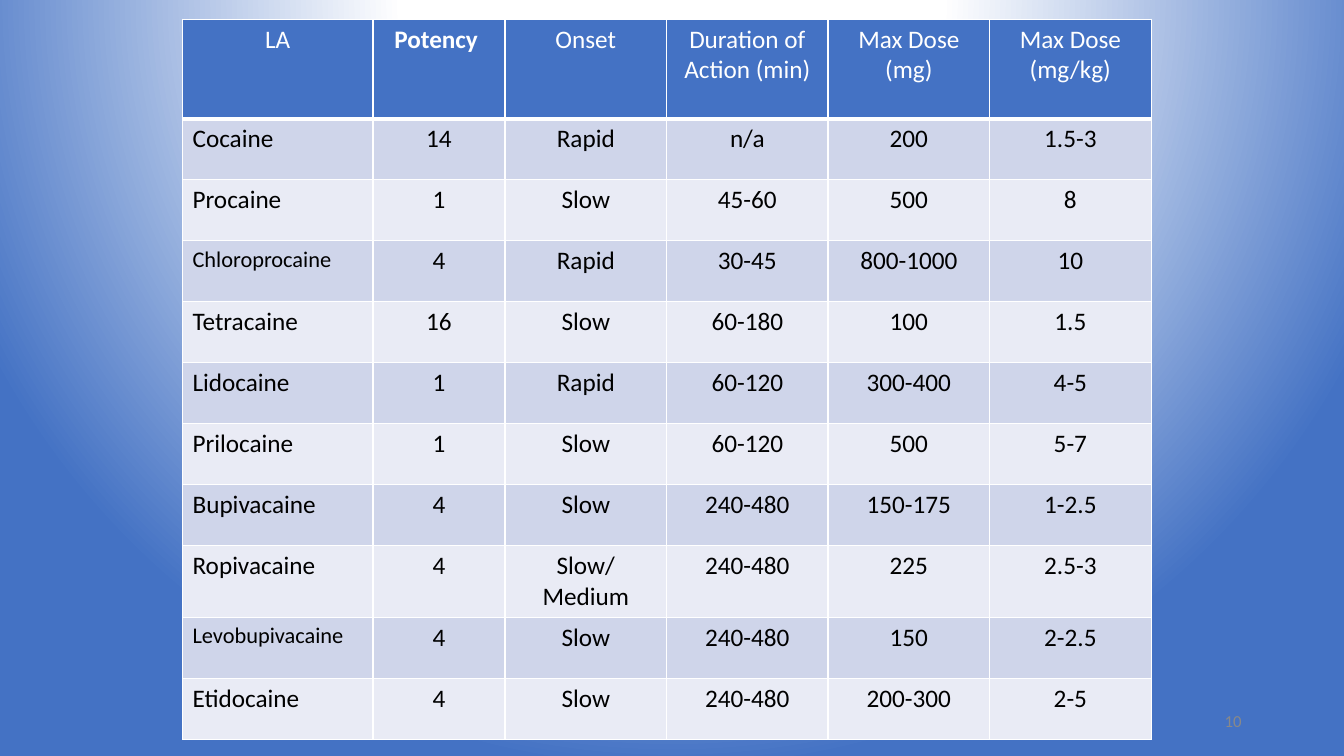
import pptx
import pptx.util
import pptx.dml.color
import pptx.enum.text
import pptx.oxml
import pptx.oxml.ns

ALIGN = pptx.enum.text.PP_ALIGN
ANCHOR = pptx.enum.text.MSO_ANCHOR
WHITE, BLACK, BLUE, GREY = "FFFFFF", "000000", "4472C4", "898989"
BANDS = ["CFD5EA", "E9EBF5"]

COLUMN_SHARES = [14.17, 9.83] + [12.02] * 4
HEADER_SHARE, ROW_SHARE, TALL_ROW_SHARE = 13.2, 8.07, 9.4
SMALL_NAMES = {"Chloroprocaine", "Levobupivacaine"}
HEADERS = ["LA", "Potency ", "Onset", "Duration of Action (min)",
           "Max Dose\n(mg)", "Max Dose\n(mg/kg)"]
ANESTHETICS = [
    ["Cocaine", "14", "Rapid", "n/a", "200", "1.5-3"],
    ["Procaine", "1", "Slow", "45-60", "500", "8"],
    ["Chloroprocaine", "4", "Rapid", "30-45", "800-1000", "10"],
    ["Tetracaine", "16", "Slow", "60-180", "100", "1.5"],
    ["Lidocaine", "1", "Rapid", "60-120", "300-400", "4-5"],
    ["Prilocaine", "1", "Slow", "60-120", "500", "5-7"],
    ["Bupivacaine", "4", "Slow", "240-480", "150-175", "1-2.5"],
    ["Ropivacaine", "4", "Slow/Medium", "240-480", "225", "2.5-3"],
    ["Levobupivacaine", "4", "Slow", "240-480", "150", "2-2.5"],
    ["Etidocaine", "4", "Slow", "240-480", "200-300", "2-5"],
]


def color(value):
    return pptx.dml.color.RGBColor.from_string(value)


class SlideBuilder:
    """Draws styled elements on one slide, with lengths in percent of its size."""

    def __init__(self, presentation, font="Calibri"):
        self.width = presentation.slide_width
        self.height = presentation.slide_height
        self.font = font
        self.slide = presentation.slides.add_slide(presentation.slide_layouts[6])

    def across(self, share):
        return round(self.width * share / 100)

    def down(self, share):
        return round(self.height * share / 100)

    def background(self, stops, focus):
        self.slide.background.fill.gradient()
        gradient = self.slide.element.find(".//" + pptx.oxml.ns.qn("a:gradFill"))
        stop_list = "".join(
            f'<a:gs pos="{position * 1000}"><a:srgbClr val="{value}"/></a:gs>'
            for position, value in stops)
        sides = " ".join(f'{side}="{share * 1000}"' for side, share in zip("ltrb", focus))
        filled = pptx.oxml.parse_xml(
            f'<a:gradFill {pptx.oxml.ns.nsdecls("a")} rotWithShape="1">'
            f'<a:gsLst>{stop_list}</a:gsLst>'
            f'<a:path path="circle"><a:fillToRect {sides}/></a:path></a:gradFill>')
        gradient.getparent().replace(gradient, filled)

    def style_text(self, frame, text, align, value, **formats):
        frame.text = text
        for paragraph in frame.paragraphs:
            paragraph.alignment = align
            for name, setting in {"name": self.font, **formats}.items():
                setattr(paragraph.font, name, setting)
            paragraph.font.color.rgb = color(value)

    def text(self, text, left, top, width, height, size, value, align):
        box = self.slide.shapes.add_textbox(
            self.across(left), self.down(top), self.across(width), self.down(height))
        frame = box.text_frame
        for name, setting in {"word_wrap": True, "vertical_anchor": ANCHOR.MIDDLE}.items():
            setattr(frame, name, setting)
        self.style_text(frame, text, align, value, size=pptx.util.Pt(size))

    def border(self, cell, value, widths):
        properties = cell._tc.get_or_add_tcPr()
        for side, points in zip("LRTB", widths):
            properties.append(pptx.oxml.parse_xml(
                f'<a:ln{side} {pptx.oxml.ns.nsdecls("a")} w="{pptx.util.Pt(points)}">'
                f'<a:solidFill><a:srgbClr val="{value}"/></a:solidFill></a:ln{side}>'))

    def cell(self, cell, text, fill, value, align, size, bold, widths):
        self.border(cell, WHITE, widths)
        cell.fill.solid()
        cell.fill.fore_color.rgb = color(fill)
        self.style_text(cell.text_frame, text, align, value,
                        size=pptx.util.Pt(size), bold=bold)

    def table(self, headers, records, left, top, columns, rows):
        frame = self.slide.shapes.add_table(
            len(rows), len(columns), self.across(left), self.down(top),
            self.across(sum(columns)), self.down(sum(rows)))
        table = frame.table
        for column, share in zip(table.columns, columns):
            column.width = self.across(share)
        for row, share in zip(table.rows, rows):
            row.height = self.down(share)
        for index, text in enumerate(headers):
            self.cell(table.cell(0, index), text, BLUE, WHITE, ALIGN.CENTER, 18,
                      text.startswith("Potency"), [1, 1, 1, 3])
        for number, record in enumerate(records):
            for index, text in enumerate(record):
                self.cell(table.cell(number + 1, index), text, BANDS[number % 2], BLACK,
                          ALIGN.CENTER if index else ALIGN.LEFT,
                          16 if text in SMALL_NAMES else 18, False, [1] * 4)


def main():
    presentation = pptx.Presentation()
    presentation.slide_width = pptx.util.Inches(13.33)
    presentation.slide_height = pptx.util.Inches(7.5)
    builder = SlideBuilder(presentation)
    builder.background([(0, WHITE), (35, WHITE), (100, BLUE)], [50, -80, 50, 180])
    rows = [HEADER_SHARE] + [
        TALL_ROW_SHARE if "Slow/Medium" in record else ROW_SHARE for record in ANESTHETICS]
    builder.table(HEADERS, ANESTHETICS, 13.58, 2.53, COLUMN_SHARES, rows)
    builder.text("10", 70.63, 92.7, 22.5, 5.33, 12, GREY, ALIGN.RIGHT)
    presentation.save("out.pptx")


if __name__ == "__main__":
    main()
